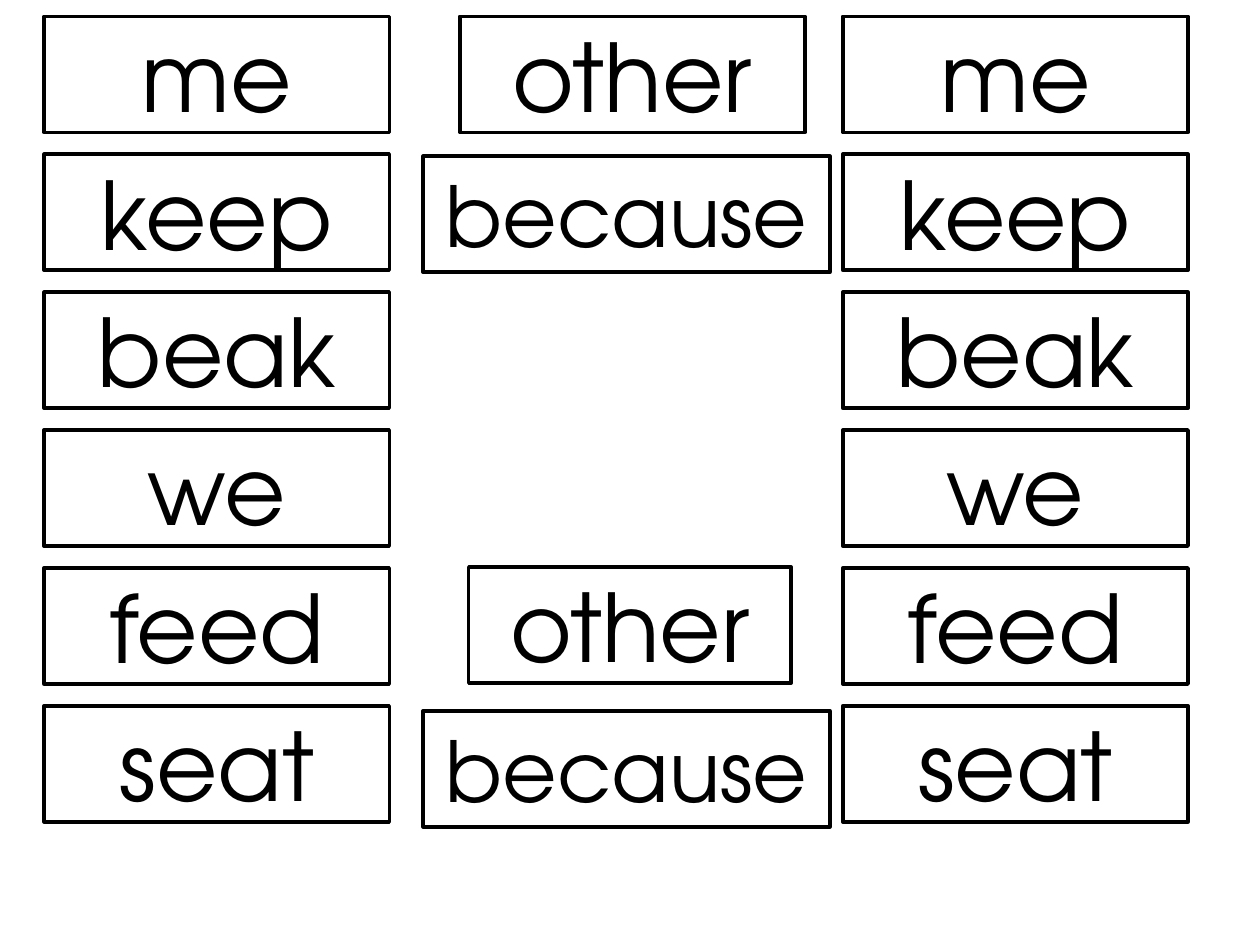
from dataclasses import dataclass

from pptx import Presentation
from pptx.dml.color import RGBColor
from pptx.enum.shapes import MSO_SHAPE
from pptx.enum.text import MSO_ANCHOR, PP_ALIGN
from pptx.shapes.autoshape import Shape
from pptx.slide import Slide
from pptx.util import Cm, Pt

COLORS = {"ink": "000000", "paper": "FFFFFF"}
FONT = "TeX Gyre Adventor"
WORDS = ("me", "keep", "beak", "we", "feed", "seat")
SIDES = (0.89, 16.99)
TOP, STEP = 0.33, 2.78
WIDTH, HEIGHT = 6.96, 2.34


@dataclass(frozen=True)
class Card:
    """A word card with its place in centimetres."""

    word: str
    left: float
    top: float
    width: float = WIDTH
    size: int = 54


def color(name: str) -> RGBColor:
    """Look up a named colour."""
    return RGBColor.from_string(COLORS[name])


def write(shape: Shape, text: str, *, size: int, ink: str = "ink",
          align: PP_ALIGN = PP_ALIGN.CENTER) -> None:
    """Put formatted text into a shape."""
    frame = shape.text_frame
    frame.word_wrap = True
    frame.vertical_anchor = MSO_ANCHOR.MIDDLE
    line = frame.paragraphs[0]
    line.alignment = align
    run = line.add_run()
    run.text = text
    run.font.name = FONT
    run.font.size = Pt(size)
    run.font.color.rgb = color(ink)


def draw(slide: Slide, card: Card) -> None:
    """Draw one word card."""
    box = slide.shapes.add_shape(
        MSO_SHAPE.RECTANGLE, Cm(card.left), Cm(card.top), Cm(card.width), Cm(HEIGHT))
    box.shadow.inherit = False
    box.fill.solid()
    box.fill.fore_color.rgb = color("paper")
    box.line.color.rgb = color("ink")
    box.line.width = Pt(2)
    write(box, card.word, size=card.size)


def main() -> None:
    """Build the sheet of word cards."""
    deck = Presentation()
    deck.slide_width, deck.slide_height = Cm(25.4), Cm(19.05)
    slide = deck.slides.add_slide(deck.slide_layouts[6])
    cards = [Card(word, left, TOP + row * STEP)
             for left in SIDES for row, word in enumerate(WORDS)]
    cards += [
        Card("other", 9.27, TOP),
        Card("other", 9.45, 11.43, width=6.5),
        *(Card("because", 8.53, top, width=8.2, size=48) for top in (3.15, 14.33)),
    ]
    for card in cards:
        draw(slide, card)
    deck.save("out.pptx")


if __name__ == "__main__":
    main()
